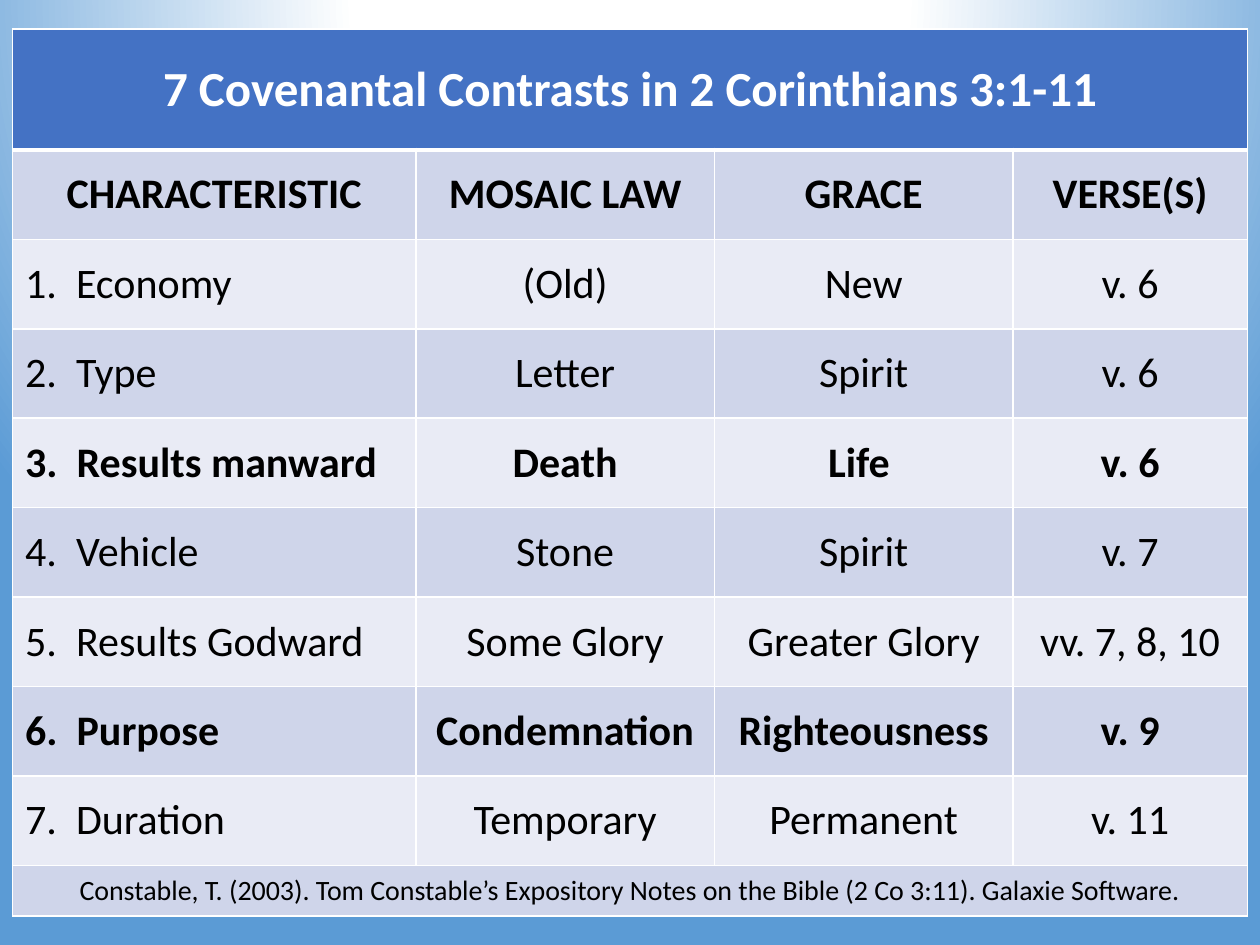
"""Build a slide with a table of seven covenantal contrasts."""
from pptx import Presentation
from pptx.dml import color
from pptx.enum import text
from pptx.oxml import parse_xml
from pptx.oxml import ns
from pptx.util import Inches, Pt

TITLE = "7 Covenantal Contrasts in 2 Corinthians 3:1-11"
SOURCE = ("Constable, T. (2003). Tom Constable’s Expository Notes on the Bible "
          "(2 Co 3:11). Galaxie Software.")
ROWS = [
    [TITLE],
    ["CHARACTERISTIC", "MOSAIC LAW", "GRACE", "VERSE(S)"],
    ["1.  Economy", "(Old)", "New", "v. 6"],
    ["2.  Type", "Letter", "Spirit", "v. 6"],
    ["3.  Results manward", "Death", "Life ", "v. 6"],
    ["4.  Vehicle", "Stone", "Spirit", "v. 7"],
    ["5.  Results Godward", "Some Glory", "Greater Glory", "vv. 7, 8, 10"],
    ["6.  Purpose", "Condemnation", "Righteousness", "v. 9"],
    ["7.  Duration", "Temporary", "Permanent", "v. 11"],
    [SOURCE],
]
COLUMN_WIDTHS = [3.2, 2.37, 2.37, 1.86]
ROW_HEIGHTS = [0.96] + [0.71] * 8 + [0.4]
BOLD_ROWS = {0, 1, 4, 7}
LAST = len(ROWS) - 1
SIZES = {0: 28, LAST: 16}


def rgb(value):
    """Turn a hex string into a colour."""
    return color.RGBColor.from_string(value)


def add_border(cell, side, points):
    """Draw a white line on one side of a cell."""
    cell._tc.get_or_add_tcPr().append(parse_xml(
        f'<a:ln{side} {ns.nsdecls("a")} w="{Pt(points)}"><a:solidFill>'
        f'<a:srgbClr val="FFFFFF"/></a:solidFill></a:ln{side}>'))


deck = Presentation()
deck.slide_width, deck.slide_height = Inches(10), Inches(7.5)
page = deck.slides.add_slide(deck.slide_layouts[6])

page.background.fill.solid()
solid = page.element.xpath(".//p:bgPr/a:solidFill")[0]
stops = "".join(f'<a:gs pos="{place * 1000}"><a:srgbClr val="{value}"/></a:gs>'
                for place, value in [(0, "FFFFFF"), (35, "FFFFFF"), (100, "5B9BD5")])
solid.getparent().replace(solid, parse_xml(
    f'<a:gradFill {ns.nsdecls("a")} rotWithShape="1"><a:gsLst>{stops}</a:gsLst>'
    '<a:path path="circle"><a:fillToRect l="50000" t="-80000" r="50000" b="180000"/>'
    '</a:path></a:gradFill>'))

table = page.shapes.add_table(len(ROWS), len(COLUMN_WIDTHS), Inches(0.1), Inches(0.23),
                              Inches(sum(COLUMN_WIDTHS)), Inches(sum(ROW_HEIGHTS))).table
for column, width in zip(table.columns, COLUMN_WIDTHS):
    column.width = Inches(width)
for row, height in zip(table.rows, ROW_HEIGHTS):
    row.height = Inches(height)

for r, words in enumerate(ROWS):
    fill = "4472C4" if r == 0 else "CFD5EA" if r % 2 or r == LAST else "E9EBF5"
    font_format = {"name": "Calibri", "size": Pt(SIZES.get(r, 24)), "bold": r in BOLD_ROWS}
    for c in range(len(COLUMN_WIDTHS)):
        cell = table.cell(r, c)
        for side in "LRTB":
            thick = (r, side) in {(0, "B"), (1, "T")}
            add_border(cell, side, 3 if thick else 1)
        cell.fill.solid()
        cell.fill.fore_color.rgb = rgb(fill)
        cell.vertical_anchor = text.MSO_ANCHOR.MIDDLE
    for c, word in enumerate(words):
        para = table.cell(r, c).text_frame.paragraphs[0]
        numbered = c == 0 and 1 < r < LAST
        para.alignment = text.PP_ALIGN.LEFT if numbered else text.PP_ALIGN.CENTER
        span = para.add_run()
        span.text = word
        for name, value in font_format.items():
            setattr(span.font, name, value)
        span.font.color.rgb = rgb("FFFFFF" if r == 0 else "000000")
    if len(words) == 1:
        table.cell(r, 0).merge(table.cell(r, len(COLUMN_WIDTHS) - 1))

deck.save("out.pptx")
